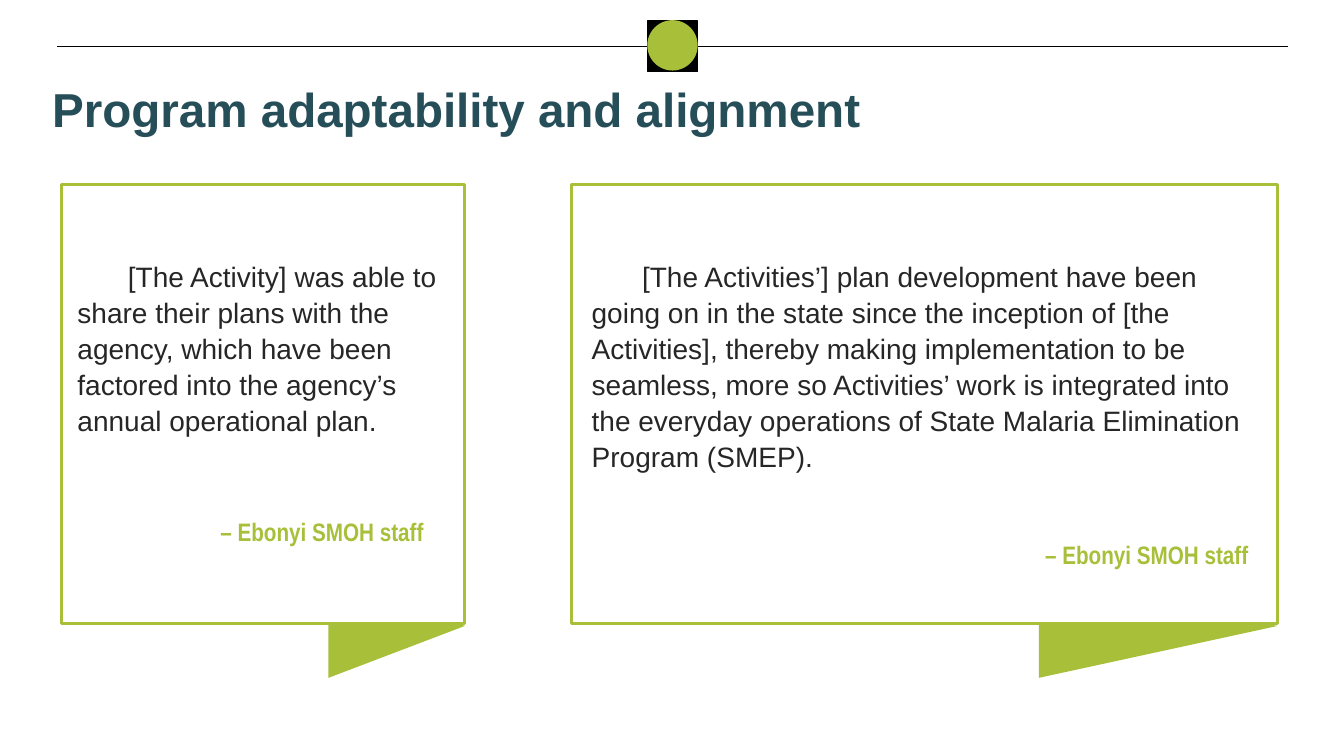
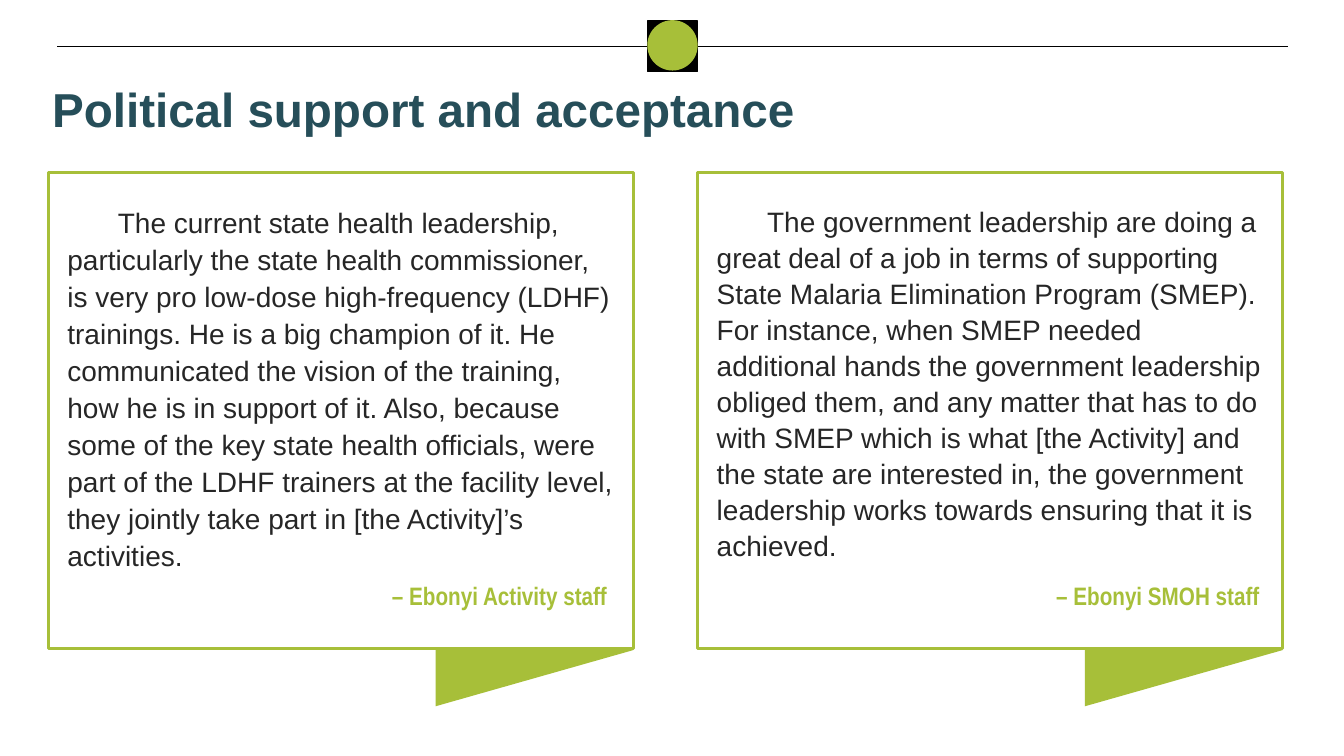
from lxml import etree
from pptx import Presentation
from pptx.dml.color import RGBColor
from pptx.enum import shapes, text
from pptx.oxml import ns
from pptx.util import Inches, Pt

HUES = {"lime": "A7BF39", "teal": "264E59", "ink": "262626",
        "black": "000000", "white": "FFFFFF"}
KIND = shapes.MSO_SHAPE

DECK = [
    ("Program adaptability and alignment", 1.83, 4.36, 2.5, 2.3, [
        (0.61, 4, 0.06, 1.07, 8,
         "[The Activity] was able to share their plans with the agency, which have been "
         "factored into the agency’s annual operational plan.",
         "– Ebonyi SMOH staff", (1.41, 5.07, 2.89, 0.4)),
        (5.67, 7, 0.1, 1.07, 8,
         "[The Activities’] plan development have been going on in the state since the "
         "inception of [the Activities], thereby making implementation to be seamless, "
         "more so Activities’ work is integrated into the everyday operations of State "
         "Malaria Elimination Program (SMEP).",
         "– Ebonyi SMOH staff", (9.66, 5.3, 2.82, 0.4)),
    ]),
    ("Political support and acceptance", 1.71, 4.72, 1.96, 3.68, [
        (0.48, 5.8, 0.09, 1.1, 0,
         "The current state health leadership, particularly the state health "
         "commissioner, is very pro low-dose high-frequency (LDHF) trainings. He is a big "
         "champion of it. He communicated the vision of the training, how he is in "
         "support of it. Also, because some of the key state health officials, were part "
         "of the LDHF trainers at the facility level, they jointly take part in [the "
         "Activity]’s activities.",
         "– Ebonyi Activity staff", (3.23, 5.71, 2.89, 0.4)),
        (6.92, 5.8, 0.09, 1.07, 8,
         "The government leadership are doing a great deal of a job in terms of "
         "supporting State Malaria Elimination Program (SMEP). For instance, when SMEP "
         "needed additional hands the government leadership obliged them, and any matter "
         "that has to do with SMEP which is what [the Activity] and the state are "
         "interested in, the government leadership works towards ensuring that it is "
         "achieved.",
         "– Ebonyi SMOH staff", (10.25, 5.69, 2.34, 0.43)),
    ]),
]


def draw(slide, kind, box, fill, edge=None, width=1):
    shape = slide.shapes.add_shape(kind, *map(Inches, box))
    shape.shadow.inherit = False
    shape.fill.solid()
    shape.fill.fore_color.rgb = RGBColor.from_string(HUES[fill])
    if edge:
        shape.line.color.rgb = RGBColor.from_string(HUES[edge])
        shape.line.width = Pt(width)
    else:
        shape.line.fill.background()
    return shape


def write(slide, box, words, size, hue, bold=False, face="Arial", anchor="TOP"):
    frame = slide.shapes.add_textbox(*map(Inches, box)).text_frame
    frame.word_wrap = True
    frame.vertical_anchor = text.MSO_ANCHOR[anchor]
    frame.text = words
    para = frame.paragraphs[0]
    font = para.runs[0].font
    font.name, font.size, font.bold = face, Pt(size), bold
    font.color.rgb = RGBColor.from_string(HUES[hue])
    return para


deck = Presentation()
deck.slide_width, deck.slide_height = Inches(13.33), Inches(7.5)

for title, top, high, start, depth, cards in DECK:
    slide = deck.slides.add_slide(deck.slide_layouts[6])
    rule = slide.shapes.add_connector(
        shapes.MSO_CONNECTOR.STRAIGHT, *map(Inches, (0.57, 0.46, 12.77, 0.46)))
    rule.line.color.rgb = RGBColor.from_string(HUES["black"])
    rule.line.width = Pt(0.75)
    etree.SubElement(rule._element.spPr, ns.qn("a:effectLst"))
    draw(slide, KIND.RECTANGLE, (6.42, 0.21, 0.5, 0.5), "black", "black")
    draw(slide, KIND.OVAL, (6.42, 0.2, 0.5, 0.5), "lime")
    write(slide, (0.42, 0.73, 12.5, 0.7), title, 34, "teal", True, anchor="MIDDLE")

    for left, wide, inset, pitch, after, quote, source, spot in cards:
        base, reach = high * 0.236, wide * 0.338
        mid = left + wide - reach / 2
        tail = draw(slide, KIND.ISOSCELES_TRIANGLE,
                    (mid - base / 2, top + high + 0.02 - reach / 2, base, reach), "lime")
        tail.rotation = 90
        draw(slide, KIND.RECTANGLE, (left, top, wide, high), "white", "lime", 2.25)

        para = write(slide, (left + inset, start, wide - 2 * inset, depth),
                     quote, 20, "ink")
        para.line_spacing = pitch
        para.space_after = Pt(after)
        para._p.get_or_add_pPr().set("indent", str(Inches(0.5)))

        credit = write(slide, spot, source, 18, "lime", True, "Arial Narrow", "MIDDLE")
        credit.alignment = text.PP_ALIGN.RIGHT

deck.save("out.pptx")
